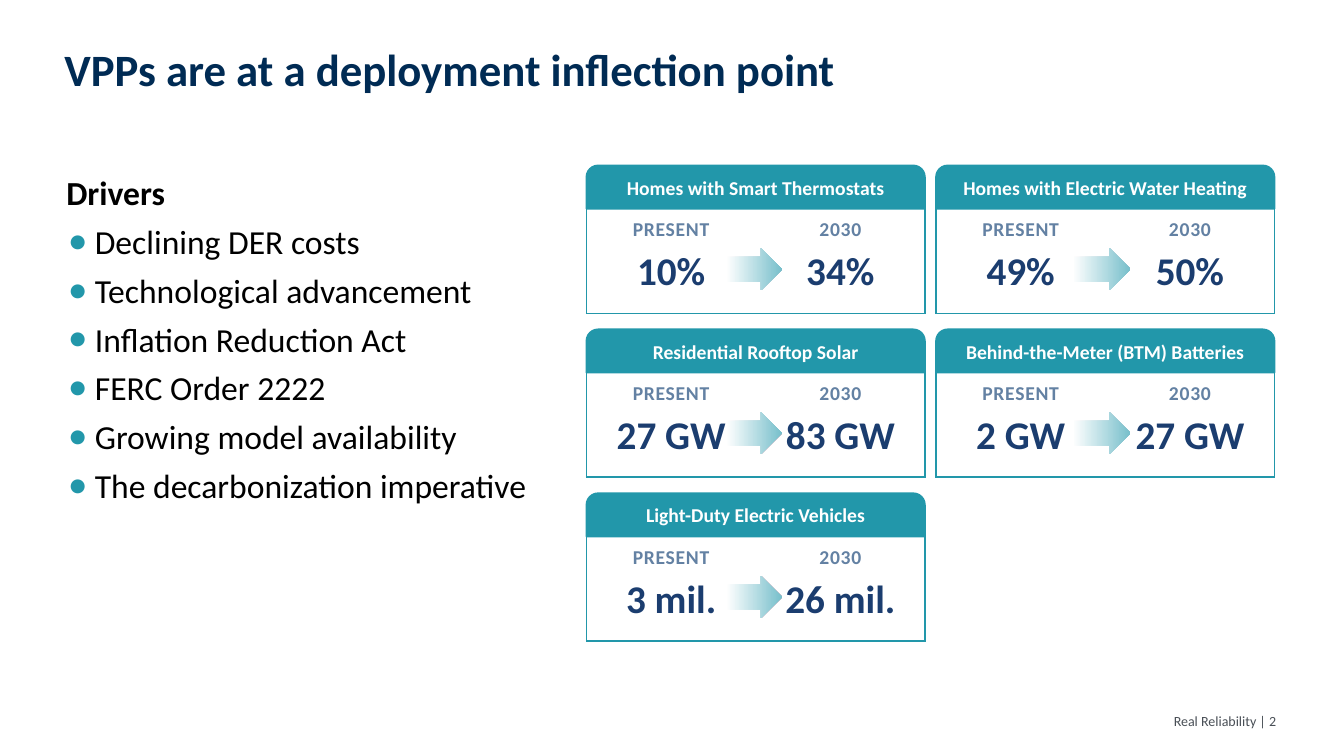
from dataclasses import dataclass
from typing import Any

from lxml import etree
from pptx import Presentation
from pptx import util as u
from pptx.dml.color import RGBColor
from pptx.enum import shapes, text
from pptx.oxml import ns
from pptx.slide import Slide

FONT = "Calibri"
WHITE = RGBColor(0xFF, 0xFF, 0xFF)
BLACK = RGBColor(0, 0, 0)
NAVY = RGBColor(0x00, 0x2B, 0x54)
TEAL = RGBColor(0x22, 0x97, 0xAA)
LIGHT_TEAL = RGBColor(0x77, 0xBF, 0xCB)
SLATE = RGBColor(0x63, 0x81, 0xA3)
BLUE = RGBColor(0x1B, 0x3D, 0x6F)
GREY = RGBColor(0x49, 0x4F, 0x56)

CARD_LEFT, CARD_TOP = 14.78, 4.17
CARD_PITCH_X, CARD_PITCH_Y = 8.81, 4.13
CARD_WIDTH, HEADER_HEIGHT = 8.53, 1.09
TABLE_OFFSET = 1.07
ROW_HEIGHTS = (0.97, 1.68)
ARROW_OFFSET_Y, ARROW_HEIGHT = 2.08, 1.07
ARROW_SPANS = ((3.51, 1.42), (3.43, 1.47))


@dataclass(frozen=True)
class Card:
    heading: str
    present: str
    future: str
    column: int
    row: int


CARDS = (
    Card("Homes with Smart Thermostats", "10%", "34%", 0, 0),
    Card("Residential Rooftop Solar", "27 GW", "83 GW", 0, 1),
    Card("Light-Duty Electric Vehicles", "3 mil.", "26 mil.", 0, 2),
    Card("Homes with Electric Water Heating", "49%", "50%", 1, 0),
    Card("Behind-the-Meter (BTM) Batteries", "2 GW", "27 GW", 1, 1),
)
DRIVERS = (
    "Declining DER costs",
    "Technological advancement",
    "Inflation Reduction Act",
    "FERC Order 2222",
    "Growing model availability",
    "The decarbonization imperative",
)


def add_run(p: Any, words: str, size: float, color: RGBColor, bold: bool = True) -> Any:
    r = p.add_run()
    r.text = words
    r.font.name = FONT
    r.font.size = u.Pt(size)
    r.font.bold = bold
    r.font.color.rgb = color
    return r


def place(sp: Any, left: float, top: float, width: float, height: float) -> None:
    sp.left, sp.top = u.Cm(left), u.Cm(top)
    sp.width, sp.height = u.Cm(width), u.Cm(height)


def set_insets(tf: Any, left: float, top: float, right: float, bottom: float) -> None:
    tf.margin_left, tf.margin_top = u.Cm(left), u.Cm(top)
    tf.margin_right, tf.margin_bottom = u.Cm(right), u.Cm(bottom)


def set_bullet(p: Any, left: float, indent: float, char: str = "") -> None:
    pPr = p._p.get_or_add_pPr()
    pPr.set("marL", str(u.Cm(left)))
    pPr.set("indent", str(u.Cm(indent)))
    if not char:
        etree.SubElement(pPr, ns.qn("a:buNone"))
        return
    color = etree.SubElement(pPr, ns.qn("a:buClr"))
    etree.SubElement(color, ns.qn("a:srgbClr"), val=str(TEAL))
    etree.SubElement(pPr, ns.qn("a:buSzPct"), val="90000")
    etree.SubElement(pPr, ns.qn("a:buFont"), typeface=FONT)
    etree.SubElement(pPr, ns.qn("a:buChar"), char=char)


def set_borders(cell: Any, visible: str) -> None:
    tcPr = cell._tc.get_or_add_tcPr()
    for side in "LRTB":
        ln = etree.SubElement(tcPr, ns.qn(f"a:ln{side}"), w=str(u.Pt(1)))
        if side in visible:
            fill = etree.SubElement(ln, ns.qn("a:solidFill"))
            etree.SubElement(fill, ns.qn("a:srgbClr"), val=str(TEAL))
        else:
            etree.SubElement(ln, ns.qn("a:noFill"))


def add_title(s: Slide) -> None:
    sp = s.shapes.title
    place(sp, 1.42, 1.04, 28.42, 1.6)
    sp.fill.solid()
    sp.fill.fore_color.rgb = WHITE
    tf = sp.text_frame
    tf.auto_size = text.MSO_AUTO_SIZE.NONE
    tf.vertical_anchor = text.MSO_ANCHOR.BOTTOM
    set_insets(tf, 0.2, 0.13, 0.25, 0.25)
    p = tf.paragraphs[0]
    p.alignment = text.PP_ALIGN.LEFT
    p.line_spacing = 0.8
    add_run(p, "VPPs are at a deployment inflection point", 32, NAVY)


def add_drivers(s: Slide) -> None:
    sp = s.placeholders[1]
    place(sp, 1.42, 3.84, 12.19, 12.62)
    tf = sp.text_frame
    tf.auto_size = text.MSO_AUTO_SIZE.NONE
    set_insets(tf, 0, 0.5, 0.25, 0.13)
    p = tf.paragraphs[0]
    set_bullet(p, 0.25, 0)
    p.space_before = u.Pt(0)
    add_run(p, "Drivers", 24, BLACK)
    for driver in DRIVERS:
        p = tf.add_paragraph()
        p.level = 1
        set_bullet(p, 0.97, -0.66, "●")
        p.space_before = u.Pt(6)
        add_run(p, driver, 24, BLACK, bold=False)


def add_header(s: Slide, heading: str, left: float, top: float) -> None:
    sp = s.shapes.add_shape(shapes.MSO_SHAPE.ROUND_2_SAME_RECTANGLE, u.Cm(left),
                            u.Cm(top), u.Cm(CARD_WIDTH), u.Cm(HEADER_HEIGHT))
    sp.shadow.inherit = False
    sp.adjustments[0] = 0.27
    sp.fill.solid()
    sp.fill.fore_color.rgb = TEAL
    sp.line.color.rgb = TEAL
    sp.line.width = u.Pt(1.25)
    tf = sp.text_frame
    tf.vertical_anchor = text.MSO_ANCHOR.MIDDLE
    p = tf.paragraphs[0]
    p.alignment = text.PP_ALIGN.CENTER
    p.line_spacing = 0.9
    add_run(p, heading, 14, WHITE)


def add_arrow(s: Slide, left: float, top: float, width: float) -> None:
    sp = s.shapes.add_shape(shapes.MSO_SHAPE.RIGHT_ARROW, u.Cm(left), u.Cm(top),
                            u.Cm(width), u.Cm(ARROW_HEIGHT))
    sp.shadow.inherit = False
    sp.adjustments[0] = 0.58
    sp.line.fill.background()
    sp.fill.gradient()
    sp.fill.gradient_angle = 0
    for stop, position, color in zip(sp.fill.gradient_stops, (0.01, 1), (WHITE, LIGHT_TEAL)):
        stop.position = position
        stop.color.rgb = color


def add_figures(s: Slide, card: Card, left: float, top: float) -> None:
    table = s.shapes.add_table(2, 2, u.Cm(left), u.Cm(top), u.Cm(CARD_WIDTH),
                               u.Cm(sum(ROW_HEIGHTS))).table
    table.first_row = table.horz_banding = False
    rows = (("PRESENT", "2030"), (card.present, card.future))
    for i, words_in_row in enumerate(rows):
        table.rows[i].height = u.Cm(ROW_HEIGHTS[i])
        for j, words in enumerate(words_in_row):
            cell = table.cell(i, j)
            set_borders(cell, "LR"[j] + "TB"[i])
            cell.fill.background()
            p = cell.text_frame.paragraphs[0]
            p.alignment = text.PP_ALIGN.CENTER
            p.line_spacing = 0.9
            if i == 0:
                cell.vertical_anchor = text.MSO_ANCHOR.BOTTOM
                set_insets(cell, 0.25, 0.25, 0.25, 0.13)
                r = add_run(p, words, 14, SLATE)
                r._r.get_or_add_rPr().set("spc", "50")
            else:
                add_run(p, words, 28, BLUE)


def add_card(s: Slide, card: Card) -> None:
    left = CARD_LEFT + card.column * CARD_PITCH_X
    top = CARD_TOP + card.row * CARD_PITCH_Y
    arrow_offset, arrow_width = ARROW_SPANS[card.column]
    add_header(s, card.heading, left, top)
    add_arrow(s, left + arrow_offset, top + ARROW_OFFSET_Y, arrow_width)
    add_figures(s, card, left, top + TABLE_OFFSET)


def add_footer(s: Slide) -> None:
    tf = s.shapes.add_textbox(u.Cm(27.1), u.Cm(17.65), u.Cm(5.31), u.Cm(1.02)).text_frame
    tf.word_wrap = True
    tf.vertical_anchor = text.MSO_ANCHOR.MIDDLE
    p = tf.paragraphs[0]
    p.alignment = text.PP_ALIGN.RIGHT
    add_run(p, "Real Reliability | 2", 10, GREY, bold=False)


def main() -> None:
    prs = Presentation()
    prs.slide_width, prs.slide_height = u.Cm(33.87), u.Cm(19.05)
    s = prs.slides.add_slide(prs.slide_layouts[1])
    add_title(s)
    add_drivers(s)
    for card in CARDS:
        add_card(s, card)
    add_footer(s)
    prs.save("out.pptx")


if __name__ == "__main__":
    main()
